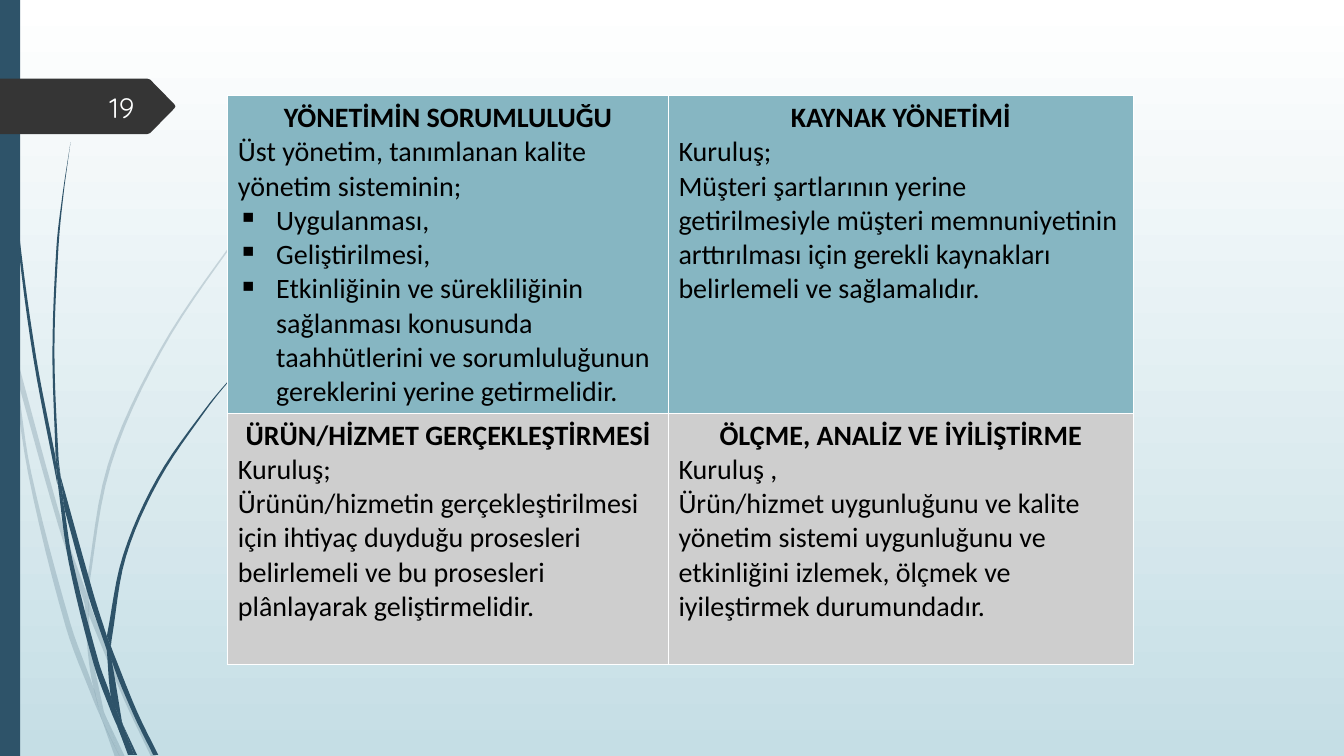
from math import dist

from lxml.etree import SubElement
from pptx import Presentation
from pptx.dml.color import RGBColor
from pptx.enum.shapes import MSO_SHAPE
from pptx.enum.text import MSO_ANCHOR, PP_ALIGN
from pptx.oxml.ns import qn
from pptx.util import Inches, Pt

COLORS = {
    "sky_top": "FFFFFF", "sky_bottom": "C5DEE5", "grass": "2E5369", "tag": "353535",
    "number": "FEFFFF", "text": "000000", "border": "FFFFFF",
    "top_row": "86B6C2", "bottom_row": "CECECE",
}

# Each blade of grass has two edges, in inches: down one side, back up the other
FAINT_BLADES = [
    ([(0.11, 3.5), (0.09, 3.22), (0, 2.82)], [(0, 2.99), (0.1, 3.44)]),
    ([(0.17, 3.76), (0.58, 5.22), (0.84, 5.99)], [(0.85, 5.86), (0.62, 5.2), (0.14, 3.45)]),
    ([(0.88, 6.1), (1.23, 6.94), (1.5, 7.51)],
     [(1.55, 7.51), (1.27, 6.92), (0.92, 6.07), (0.88, 5.96)]),
    ([(1.05, 7.11), (1.19, 7.51)], [(1.24, 7.51)]),
    ([(0.11, 3.5), (0.28, 4.7), (0.65, 6.21), (0.92, 6.93), (1.01, 7.14)],
     [(0.99, 7.07), (0.93, 6.83), (0.7, 6.19), (0.31, 4.69), (0.17, 3.76)]),
    ([(0.84, 5.99), (0.87, 6.46), (0.93, 6.83), (1.05, 7.11)],
     [(1.03, 7.06), (0.91, 6.46), (0.88, 6.08)]),
    ([(0.88, 5.96), (0.88, 5.84), (1.1, 4.62), (1.6, 3.49), (2.29, 2.45), (2.68, 1.98),
      (2.9, 1.75), (3.12, 1.54)],
     [(3.12, 1.53), (2.89, 1.75), (2.68, 1.97), (2.28, 2.44), (1.58, 3.48), (1.07, 4.61),
      (0.85, 5.84)]),
    ([(1.01, 7.14), (1.14, 7.51)], [(1.19, 7.51)]),
    ([(0.88, 6.1), (0.88, 5.96), (0.85, 5.86)], [(0.84, 5.99), (0.88, 6.08)]),
    ([(0.93, 6.83), (0.99, 7.07), (1.01, 7.14), (1.19, 7.51)], [(1.05, 7.11), (0.96, 6.92)]),
]
DARK_BLADES = [
    ([(0.03, 0), (0.04, 0.48), (0.07, 1.1), (0.17, 2.33), (0.33, 3.55), (0.57, 4.81)],
     [(0.55, 4.53), (0.36, 3.55), (0.19, 2.32), (0.08, 1.09), (0.05, 0.48), (0.04, 0)]),
    ([(0.64, 5.05), (0.88, 5.92), (1.06, 6.45)], [(1.06, 6.31), (0.93, 5.9), (0.6, 4.72)]),
    ([(1.1, 6.41), (1.11, 6.56), (1.32, 7.08), (1.52, 7.49)],
     [(1.57, 7.49), (1.36, 7.06), (1.13, 6.49)]),
    ([(0.57, 4.77), (0.68, 5.57), (0.93, 6.59), (1.11, 7.08), (1.17, 7.22)],
     [(1.16, 7.17), (1.1, 6.91), (0.98, 6.57), (0.72, 5.56), (0.64, 5.05)]),
    ([(0.6, 4.72), (0.58, 4.53), (0.54, 3.49), (0.58, 2.45), (0.63, 1.93), (0.7, 1.41)],
     [(0.7, 1.41), (0.62, 1.93), (0.56, 2.45), (0.52, 3.49), (0.55, 4.49)]),
    ([(1.22, 7.19), (1.33, 7.49)], [(1.36, 7.49)]),
    ([(0.55, 4.49), (0.57, 4.77), (0.64, 5.05)], [(0.6, 4.72)]),
    ([(1.1, 6.41), (1.11, 6.33), (1.25, 5.52), (1.58, 4.76), (2.05, 4.06), (2.31, 3.74),
      (2.61, 3.44)],
     [(2.6, 3.44), (2.31, 3.73), (2.04, 4.05), (1.56, 4.74), (1.22, 5.51), (1.06, 6.31)]),
    ([(1.17, 7.22), (1.27, 7.49)], [(1.31, 7.49)]),
    ([(1.06, 6.45), (1.1, 6.91), (1.16, 7.06), (1.22, 7.19)],
     [(1.21, 7.16), (1.11, 6.56), (1.09, 6.51)]),
    ([(1.06, 6.31), (1.06, 6.45), (1.11, 6.56)], [(1.1, 6.41)]),
    ([(1.1, 6.91), (1.17, 7.22), (1.3, 7.49)], [(1.33, 7.49), (1.22, 7.19), (1.16, 7.06)]),
]

# Each cell: heading, plain paragraphs, bulleted paragraphs
CELLS = [
    [("YÖNETİMİN SORUMLULUĞU",
      ["Üst yönetim, tanımlanan kalite yönetim sisteminin;"],
      ["Uygulanması,", "Geliştirilmesi,",
       "Etkinliğinin ve sürekliliğinin sağlanması konusunda taahhütlerini ve "
       "sorumluluğunun gereklerini yerine getirmelidir."]),
     ("KAYNAK YÖNETİMİ",
      ["Kuruluş;",
       "Müşteri şartlarının yerine getirilmesiyle müşteri memnuniyetinin "
       "arttırılması için gerekli kaynakları belirlemeli ve sağlamalıdır."], [])],
    [("ÜRÜN/HİZMET GERÇEKLEŞTİRMESİ",
      ["Kuruluş;",
       "Ürünün/hizmetin gerçekleştirilmesi için ihtiyaç duyduğu prosesleri "
       "belirlemeli ve bu prosesleri plânlayarak geliştirmelidir."], []),
     ("ÖLÇME, ANALİZ VE İYİLİŞTİRME",
      ["Kuruluş ,",
       "Ürün/hizmet uygunluğunu ve kalite yönetim sistemi uygunluğunu ve "
       "etkinliğini izlemek, ölçmek ve iyileştirmek durumundadır."], [])],
]


def color(name):
    return RGBColor.from_string(COLORS[name])


def paint(shape, name):
    shape.shadow.inherit = False
    shape.fill.solid()
    shape.fill.fore_color.rgb = color(name)
    shape.line.fill.background()


def smooth(points, steps=6):
    """Points along a cubic curve that passes through all the given points."""
    last = len(points) - 1
    directions = []
    for index in range(last + 1):
        before, after = points[max(index - 1, 0)], points[min(index + 1, last)]
        length = dist(before, after) or 1
        directions.append(((after[0] - before[0]) / length, (after[1] - before[1]) / length))
    curve = [points[0]]
    for index in range(last):
        start, end = points[index], points[index + 1]
        reach = dist(start, end) / 3
        for step in range(1, steps + 1):
            t = step / steps
            curve.append(tuple(
                (1 - t) ** 3 * a + 3 * (1 - t) ** 2 * t * (a + reach * da)
                + 3 * (1 - t) * t ** 2 * (b - reach * db) + t ** 3 * b
                for a, b, da, db in zip(start, end, directions[index], directions[index + 1])))
    return curve


def add_outline(shapes, points, name):
    corners = [(Inches(x), Inches(y)) for x, y in points]
    builder = shapes.build_freeform(*corners[0])
    builder.add_line_segments(corners[1:], close=True)
    shape = builder.convert_to_shape()
    paint(shape, name)
    return shape


def add_grass(slide, blades, opacity=None):
    group = slide.shapes.add_group_shape()
    for down, back in blades:
        blade = add_outline(group.shapes, smooth(down) + smooth(back), "grass")
        if opacity:
            tint = blade.fill._xPr.find(".//" + qn("a:srgbClr"))
            SubElement(tint, qn("a:alpha"), val=str(opacity * 1000))


def add_number_tag(slide, left, top, width, height, number):
    right, middle, bottom = left + width, top + height / 2, top + height
    add_outline(slide.shapes, [
        (left, top), (right - 0.28, top), (right - 0.25, top + 0.01), (right - 0.01, middle - 0.02),
        (right, middle), (right - 0.01, middle + 0.02), (right - 0.25, bottom - 0.01),
        (right - 0.28, bottom), (left, bottom)], "tag")
    box = slide.shapes.add_textbox(
        Inches(left + 0.58), Inches(top + 0.08), Inches(0.85), Inches(0.4))
    frame = box.text_frame
    frame.word_wrap = True
    frame.vertical_anchor = MSO_ANCHOR.MIDDLE
    paragraph = frame.paragraphs[0]
    paragraph.text = number
    paragraph.alignment = PP_ALIGN.RIGHT
    set_font(paragraph, "Quicksand", "number")


def set_font(paragraph, family, name, bold=False):
    font = paragraph.font
    font.name, font.size, font.bold = family, Pt(20), bold
    font.color.rgb = color(name)


def fill_cell(cell, content, fill):
    heading, plain, bulleted = content
    # Borders come before the fill in the cell properties
    properties = cell._tc.get_or_add_tcPr()
    for side in ("lnL", "lnR", "lnT", "lnB"):
        line = SubElement(properties, qn("a:" + side), w=str(Pt(1)))
        SubElement(SubElement(line, qn("a:solidFill")), qn("a:srgbClr"), val=COLORS["border"])
    cell.fill.solid()
    cell.fill.fore_color.rgb = color(fill)
    frame = cell.text_frame
    frame.text = "\n".join([heading, *plain, *bulleted])
    for index, paragraph in enumerate(frame.paragraphs):
        set_font(paragraph, "Calibri", "text", bold=index == 0)
        paragraph.alignment = PP_ALIGN.LEFT if index else PP_ALIGN.CENTER
        if index > len(plain):
            layout = paragraph._p.get_or_add_pPr()
            layout.set("marL", str(Inches(0.38)))
            layout.set("indent", str(Inches(-0.38)))
            bullet = SubElement(layout, qn("a:buChar"), char="▪")
            layout.remove(bullet)
            layout.insert(0, bullet)


def add_process_table(slide, left, top, widths, heights):
    table = slide.shapes.add_table(
        len(heights), len(widths), Inches(left), Inches(top),
        Inches(sum(widths)), Inches(sum(heights))).table
    for column, width in zip(table.columns, widths):
        column.width = Inches(width)
    for row, height, contents, fill in zip(table.rows, heights, CELLS, ("top_row", "bottom_row")):
        row.height = Inches(height)
        for cell, content in zip(row.cells, contents):
            fill_cell(cell, content, fill)


def main():
    presentation = Presentation()
    presentation.slide_width, presentation.slide_height = Inches(13.33), Inches(7.5)
    slide = presentation.slides.add_slide(presentation.slide_layouts[6])

    # Background
    sky = slide.background.fill
    sky.gradient()
    sky.gradient_angle = 270
    for stop, name in zip(sky.gradient_stops, ("sky_top", "sky_bottom")):
        stop.color.rgb = color(name)

    # Grass and left band
    add_grass(slide, FAINT_BLADES, opacity=20)
    add_grass(slide, DARK_BLADES)
    band = slide.shapes.add_shape(MSO_SHAPE.RECTANGLE, 0, 0, Inches(0.2), Inches(7.5))
    paint(band, "grass")

    # Content
    add_number_tag(slide, 0, 0.78, 1.74, 0.55, "19")
    add_process_table(slide, 2.26, 0.95, widths=(4.37, 4.61), heights=(3.15, 2.49))
    presentation.save("out.pptx")


if __name__ == "__main__":
    main()
